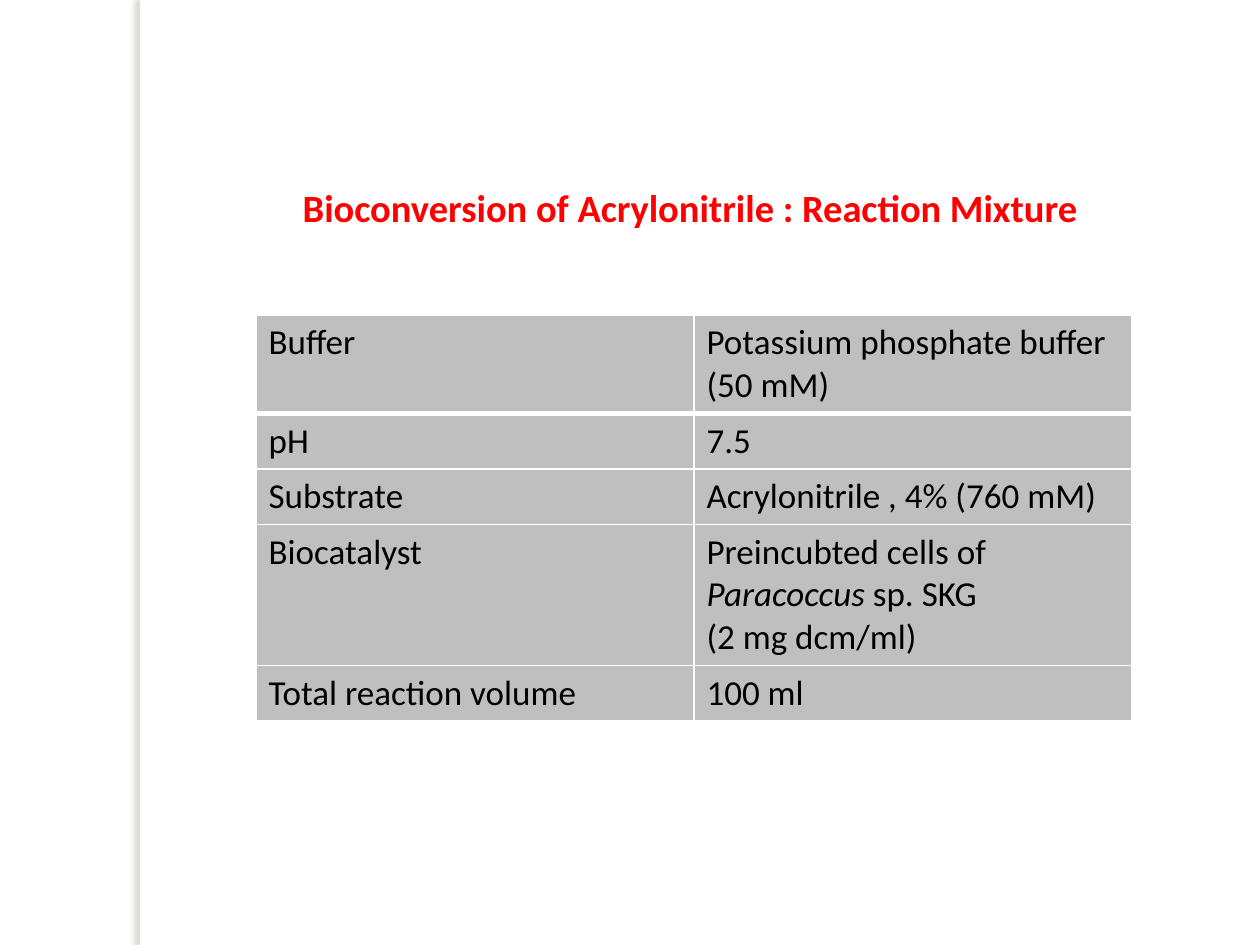
"""Builds a slide with a table of the acrylonitrile reaction mixture."""
from lxml import etree
from pptx import Presentation
from pptx import util as u
from pptx.dml.color import RGBColor
from pptx.enum import shapes, text
from pptx.oxml import ns

PX = 914400 // 126
FONT = "Calibri"
COLORS = {"title": "FF0000", "text": "000000", "cell": "BFBFBF",
          "white": "FFFFFF", "shadow": "736F63"}
TITLE = "Bioconversion of Acrylonitrile : Reaction Mixture "
ROWS = [
    ("Buffer", [[("Potassium phosphate buffer (50 mM)", False)]], 95),
    ("pH", [[("7.5", False)]], 55),
    ("Substrate", [[("Acrylonitrile , 4% (760 mM)", False)]], 55),
    ("Biocatalyst", [[("Preincubted cells of ", False), ("Paracoccus", True),
                      (" sp. SKG", False)],
                     [("(2 mg dcm/ml)", False)]], 138),
    ("Total reaction volume", [[("100 ml", False)]], 55),
]
STRIPE_BOX = (140, 0, 10, 945)
TITLE_BOX = (178, 178, 1033, 69)
TABLE_LEFT, TABLE_TOP, COLUMN_WIDTH = 256, 315, 438


def px(*lengths):
    return [u.Emu(length * PX) for length in lengths]


def rgb(name):
    return RGBColor.from_string(COLORS[name])


def add_element(parent, tag, **attributes):
    return etree.SubElement(parent, ns.qn(tag), attributes)


def style(paragraph, size, color, bold=False):
    font = paragraph.font
    font.name, font.size, font.bold = FONT, u.Pt(size), bold
    font.color.rgb = rgb(color)


def add_stripe(slide):
    stripe = slide.shapes.add_shape(shapes.MSO_SHAPE.RECTANGLE, *px(*STRIPE_BOX))
    stripe.fill.solid()
    stripe.fill.fore_color.rgb = rgb("white")
    stripe.line.fill.background()
    stripe.shadow.inherit = False
    effects = stripe.element.spPr.find(ns.qn("a:effectLst"))
    shadow = add_element(effects, "a:outerShdw", blurRad=str(u.Pt(3)),
                         dist=str(u.Pt(3)), dir=str(180 * 60000))
    color = add_element(shadow, "a:srgbClr", val=COLORS["shadow"])
    add_element(color, "a:alpha", val="25000")


def set_title(slide):
    title = slide.shapes.title
    title.left, title.top, title.width, title.height = px(*TITLE_BOX)
    frame = title.text_frame
    frame.text = TITLE
    frame.word_wrap = True
    frame.auto_size = text.MSO_AUTO_SIZE.NONE
    frame.vertical_anchor = text.MSO_ANCHOR.TOP
    frame.paragraphs[0].alignment = text.PP_ALIGN.CENTER
    style(frame.paragraphs[0], 22, "title", bold=True)


def set_borders(cell, top, bottom):
    properties = cell._tc.get_or_add_tcPr()
    for side, width in (("L", 1), ("R", 1), ("T", top), ("B", bottom)):
        line = add_element(properties, f"a:ln{side}", w=str(u.Pt(width)))
        add_element(add_element(line, "a:solidFill"), "a:srgbClr", val=COLORS["white"])


def fill_cell(cell, paragraphs):
    cell.fill.solid()
    cell.fill.fore_color.rgb = rgb("cell")
    frame = cell.text_frame
    for index, runs in enumerate(paragraphs):
        paragraph = frame.add_paragraph() if index else frame.paragraphs[0]
        style(paragraph, 20, "text")
        for words, italic in runs:
            run = paragraph.add_run()
            run.text = words
            if italic:
                run.font.italic = True


def add_mixture_table(slide):
    height = sum(row[2] for row in ROWS)
    table = slide.shapes.add_table(
        len(ROWS), 2, *px(TABLE_LEFT, TABLE_TOP, 2 * COLUMN_WIDTH, height)).table
    table.horz_banding = False
    for column in table.columns:
        column.width = px(COLUMN_WIDTH)[0]
    for index, (label, value, row_height) in enumerate(ROWS):
        table.rows[index].height = px(row_height)[0]
        for column, paragraphs in enumerate(([[(label, False)]], value)):
            cell = table.cell(index, column)
            set_borders(cell, 3 if index == 1 else 1, 3 if index == 0 else 1)
            fill_cell(cell, paragraphs)


def main():
    presentation = Presentation()
    presentation.slide_width, presentation.slide_height = px(1260, 945)
    slide = presentation.slides.add_slide(presentation.slide_layouts[5])
    add_stripe(slide)
    set_title(slide)
    add_mixture_table(slide)
    presentation.save("out.pptx")


if __name__ == "__main__":
    main()
